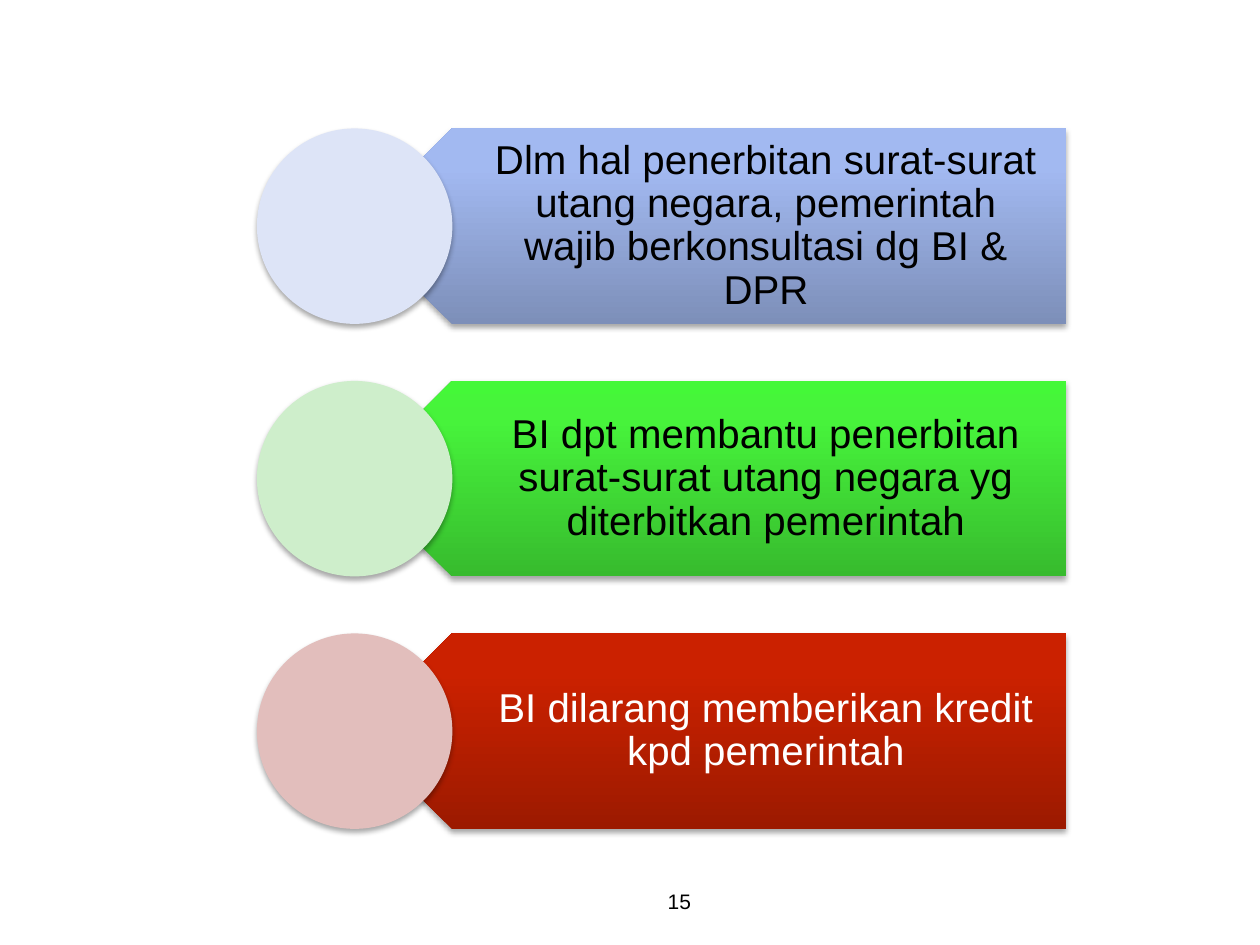
import pptx
import pptx.dml.color
import pptx.enum.shapes
import pptx.enum.text
import pptx.oxml
import pptx.oxml.ns
import pptx.util

Cm = pptx.util.Cm
RGB = pptx.dml.color.RGBColor
SHAPE = pptx.enum.shapes.MSO_SHAPE
ALIGN = pptx.enum.text.PP_ALIGN
ANCHOR = pptx.enum.text.MSO_ANCHOR

BLACK = RGB(0x00, 0x00, 0x00)
WHITE = RGB(0xFF, 0xFF, 0xFF)
PALE_BLUE = RGB(0xDD, 0xE4, 0xF7)
PALE_GREEN = RGB(0xCE, 0xEE, 0xCB)
PALE_RED = RGB(0xE2, 0xBE, 0xBC)
# Gradients run from the bottom edge to the top, with stops at 0, 80 and 100 %
BLUES = (RGB(0x7D, 0x8F, 0xB9), RGB(0xA2, 0xB9, 0xF1), RGB(0xA2, 0xB9, 0xF3))
GREENS = (RGB(0x37, 0xBB, 0x2E), RGB(0x47, 0xF3, 0x3B), RGB(0x44, 0xF8, 0x38))
REDS = (RGB(0x9C, 0x1A, 0x00), RGB(0xCB, 0x21, 0x00), RGB(0xCB, 0x21, 0x00))
STOPS = (0, 80, 100)

RULES = [
    ("Dlm hal penerbitan surat-surat utang negara, pemerintah wajib "
     "berkonsultasi dg BI & DPR", BLACK, BLUES, PALE_BLUE),
    ("BI dpt membantu penerbitan surat-surat utang negara yg diterbitkan "
     "pemerintah", BLACK, GREENS, PALE_GREEN),
    ("BI dilarang memberikan kredit kpd pemerintah", WHITE, REDS, PALE_RED),
]
PAGE_NUMBER = "15"

FIRST_TOP, PITCH, HEIGHT = Cm(2.59), Cm(5.09), Cm(3.94)
CIRCLE_LEFT = Cm(5.18)
ARROW_LEFT, ARROW_WIDTH = Cm(7.14), Cm(14.35)
TEXT_LEFT = Cm(8.13)
TEXT_WIDTH = ARROW_LEFT + ARROW_WIDTH - TEXT_LEFT


def add_text(shapes, text, *, box, size, color, align, anchor=ANCHOR.TOP,
             side_insets=(Cm(0.25), Cm(0.25)), line_spacing=1.0):
    frame = shapes.add_textbox(*box).text_frame
    frame.word_wrap = True
    frame.vertical_anchor = anchor
    frame.margin_left, frame.margin_right = side_insets
    paragraph = frame.paragraphs[0]
    paragraph.alignment = align
    paragraph.line_spacing = line_spacing
    run = paragraph.add_run()
    run.text = text
    run.font.name = "Arial"
    run.font.size = pptx.util.Pt(size)
    run.font.color.rgb = color


def add_shadowed(shapes, preset, *box):
    """Add a shape without outline that casts a soft shadow straight down."""
    shape = shapes.add_shape(preset, *box)
    shape.line.fill.background()
    shape.shadow.inherit = False
    effects = shape._element.spPr.find(pptx.oxml.ns.qn("a:effectLst"))
    effects.append(pptx.oxml.parse_xml(
        f'<a:outerShdw {pptx.oxml.ns.nsdecls("a")} blurRad="40000" '
        'dist="23000" dir="5400000" rotWithShape="0">'
        '<a:srgbClr val="000000"><a:alpha val="35000"/></a:srgbClr>'
        '</a:outerShdw>'))
    return shape


def fill_upward(shape, colors):
    """Fill with a gradient that stays upright when the shape is rotated."""
    shape.fill.background()
    properties = shape._element.spPr
    stops = "".join(
        f'<a:gs pos="{stop * 1000}"><a:srgbClr val="{color}"/></a:gs>'
        for stop, color in zip(STOPS, colors))
    gradient = pptx.oxml.parse_xml(
        f'<a:gradFill {pptx.oxml.ns.nsdecls("a")} rotWithShape="0">'
        f'<a:gsLst>{stops}</a:gsLst>'
        '<a:lin ang="16200000" scaled="0"/></a:gradFill>')
    properties.replace(properties.find(pptx.oxml.ns.qn("a:noFill")), gradient)


def main():
    deck = pptx.Presentation()
    deck.slide_width, deck.slide_height = Cm(25.4), Cm(19.05)
    slide = deck.slides.add_slide(deck.slide_layouts[6])
    diagram = slide.shapes.add_group_shape().shapes

    for row, (rule, text_color, arrow_colors, circle_color) in enumerate(RULES):
        top = FIRST_TOP + row * PITCH
        arrow = add_shadowed(diagram, SHAPE.PENTAGON,
                             ARROW_LEFT, top, ARROW_WIDTH, HEIGHT)
        arrow.rotation = 180
        fill_upward(arrow, arrow_colors)
        add_text(diagram, rule, box=(TEXT_LEFT, top, TEXT_WIDTH, HEIGHT),
                 size=23, color=text_color, align=ALIGN.CENTER,
                 anchor=ANCHOR.MIDDLE, side_insets=(Cm(1.73), Cm(0.46)),
                 line_spacing=0.9)
        circle = add_shadowed(diagram, SHAPE.OVAL,
                              CIRCLE_LEFT, top, HEIGHT, HEIGHT)
        circle.fill.solid()
        circle.fill.fore_color.rgb = circle_color

    add_text(slide.shapes, PAGE_NUMBER,
             box=(Cm(8.26), Cm(17.78), Cm(5.92), Cm(0.64)),
             size=12, color=BLACK, align=ALIGN.RIGHT)
    deck.save("out.pptx")


if __name__ == "__main__":
    main()
